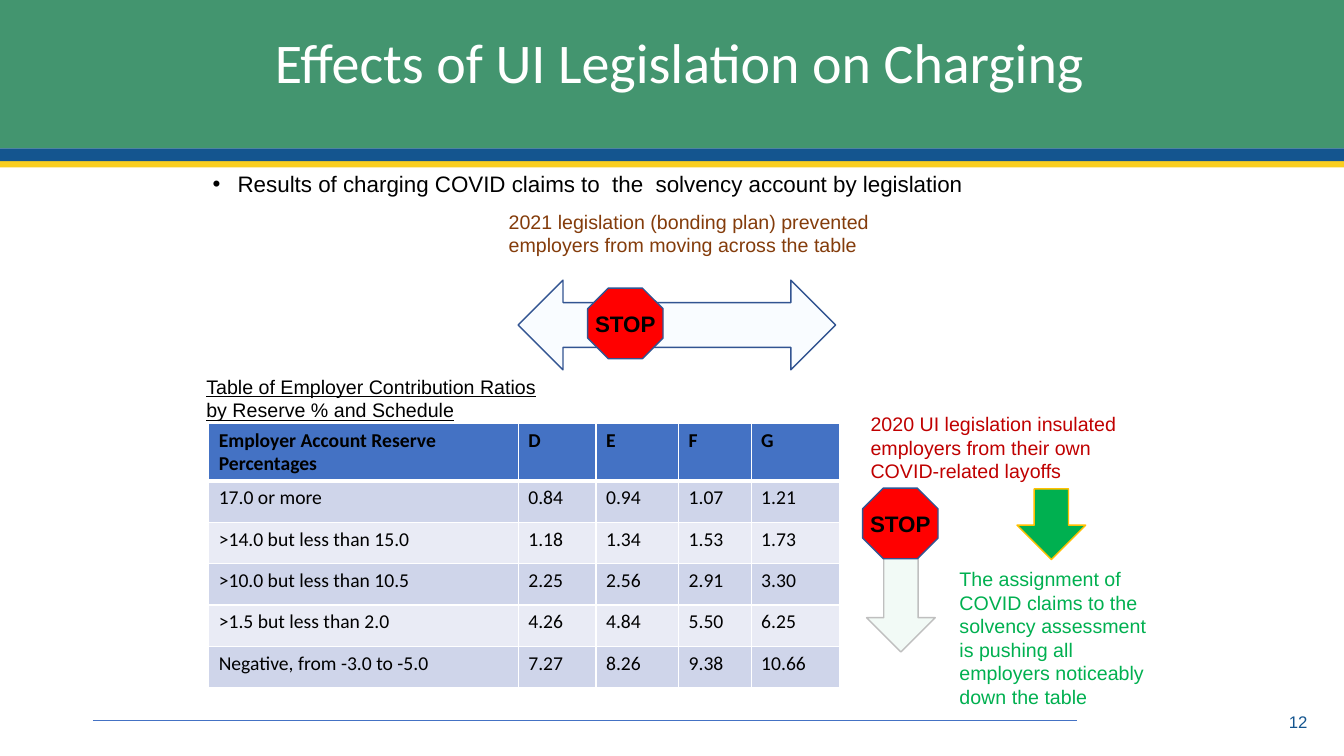
from dataclasses import dataclass
from typing import Optional

import lxml.etree
import pptx
import pptx.dml.color
import pptx.enum.shapes
import pptx.enum.text
import pptx.oxml
import pptx.oxml.ns
import pptx.util

Cm = pptx.util.Cm
Pt = pptx.util.Pt
Shapes = pptx.enum.shapes.MSO_SHAPE
Align = pptx.enum.text.PP_ALIGN
Anchor = pptx.enum.text.MSO_ANCHOR
qn = pptx.oxml.ns.qn

SLIDE_WIDTH, SLIDE_HEIGHT = 33.87, 19.05
WHITE, BLACK, NAVY, OUTLINE = "FFFFFF", "000000", "14558F", "325491"
GREEN, HEADER_BLUE = "00B050", "4472C4"
BAND_COLORS = ("CFD5EA", "E9EBF5")


@dataclass
class Box:
    left: float
    top: float
    width: float
    height: float

    def lengths(self) -> tuple:
        return Cm(self.left), Cm(self.top), Cm(self.width), Cm(self.height)


@dataclass
class Block:
    kind: int
    box: Box
    fill: str
    line: Optional[str] = None
    opacity: int = 100


@dataclass
class Label:
    text: str
    box: Box
    size: float = 14
    color: str = BLACK
    font: str = "Arial"
    underline: bool = False
    anchor: int = Anchor.TOP
    align: int = Align.LEFT
    bullet: bool = False
    line_spacing: float = 1.0


BLOCKS = [
    # Header bands
    Block(Shapes.RECTANGLE, Box(0, 4.06, SLIDE_WIDTH, 0.16), "F9CE20"),
    Block(Shapes.RECTANGLE, Box(0, 0, SLIDE_WIDTH, 3.74), "43956F"),
    Block(Shapes.RECTANGLE, Box(0, 3.74, SLIDE_WIDTH, 0.32), NAVY),
    # Arrows
    Block(Shapes.LEFT_RIGHT_ARROW, Box(13.06, 7.06, 8, 2.26), "99CCFF", OUTLINE, 5),
    Block(Shapes.DOWN_ARROW, Box(25.63, 12.32, 1.73, 1.78), GREEN, "FFC000"),
    Block(Shapes.DOWN_ARROW, Box(21.84, 12.34, 1.73, 4.09), GREEN, "BFBFBF", 5),
]

STOP_SIGNS = [Box(14.81, 7.26, 1.9, 1.78), Box(21.74, 12.3, 1.9, 1.78)]

LABELS = [
    Label("Effects of UI Legislation on Charging", Box(6.68, 0.9, 24.41, 1.5), 40, WHITE,
          "Calibri", anchor=Anchor.MIDDLE, line_spacing=0.9),
    Label("12", Box(28.91, 17.68, 4.29, 1.02), 12, NAVY,
          anchor=Anchor.MIDDLE, align=Align.RIGHT),
    Label("Results of charging COVID claims to  the  solvency account by legislation",
          Box(5.11, 4.24, 22.71, 0.95), 16, bullet=True, line_spacing=0.9),
    Label("The assignment of COVID claims to the solvency assessment is pushing all "
          "employers noticeably down the table", Box(23.93, 14.17, 5.64, 3.84), color=GREEN),
    Label("2021 legislation (bonding plan) prevented employers from moving across the table",
          Box(12.57, 5.16, 10.39, 1.45), color="843C0B"),
    Label("2020 UI legislation insulated employers from their own COVID-related layoffs",
          Box(21.69, 10.26, 7.19, 2.06), color="C00000"),
    Label("Table of Employer Contribution Ratios by Reserve % and Schedule",
          Box(4.95, 9.32, 9.02, 1.45), underline=True),
]

TABLE_BOX = Box(5.26, 10.67, 15.9, 6.58)
COLUMN_WIDTHS = (7.8, 1.96, 2.08, 1.83, 2.23)
ROW_HEIGHT = 1.04
CONTRIBUTION_RATIOS = [
    ("Employer Account Reserve Percentages", "D", "E", "F", "G"),
    ("17.0 or more", "0.84", "0.94", "1.07", "1.21"),
    (">14.0 but less than 15.0", "1.18", "1.34", "1.53", "1.73"),
    (">10.0 but less than 10.5", "2.25", "2.56", "2.91", "3.30"),
    (">1.5 but less than 2.0", "4.26", "4.84", "5.50", "6.25"),
    ("Negative, from -3.0 to -5.0", "7.27", "8.26", "9.38", "10.66"),
]


def rgb(value: str) -> pptx.dml.color.RGBColor:
    return pptx.dml.color.RGBColor.from_string(value)


def format_font(font, name: str, size: float, color: str, bold: bool = False) -> None:
    font.name, font.size, font.bold = name, Pt(size), bold
    font.color.rgb = rgb(color)


def add_block(slide, block: Block):
    shape = slide.shapes.add_shape(block.kind, *block.box.lengths())
    shape.shadow.inherit = False
    shape.fill.solid()
    shape.fill.fore_color.rgb = rgb(block.fill)
    if block.opacity < 100:
        color = shape.fill._xPr.find(".//" + qn("a:srgbClr"))
        lxml.etree.SubElement(color, qn("a:alpha"), val=str(block.opacity * 1000))
    if block.line:
        shape.line.color.rgb = rgb(block.line)
        shape.line.width = Pt(1)
    else:
        shape.line.fill.background()
    return shape


def add_stop_sign(slide, box: Box) -> None:
    shape = add_block(slide, Block(Shapes.OCTAGON, box, "FF0000", OUTLINE))
    frame = shape.text_frame
    frame.text = "STOP"
    frame.word_wrap = False
    frame.vertical_anchor = Anchor.MIDDLE
    frame.margin_left = frame.margin_right = frame.margin_top = frame.margin_bottom = 0
    frame.paragraphs[0].alignment = Align.CENTER
    format_font(frame.paragraphs[0].runs[0].font, "Arial", 16, BLACK, True)


def add_label(slide, label: Label) -> None:
    frame = slide.shapes.add_textbox(*label.box.lengths()).text_frame
    frame.text = label.text
    frame.word_wrap = True
    frame.vertical_anchor = label.anchor
    paragraph = frame.paragraphs[0]
    paragraph.alignment = label.align
    paragraph.line_spacing = label.line_spacing
    if label.bullet:
        properties = paragraph._p.get_or_add_pPr()
        properties.set("marL", str(Cm(0.63)))
        properties.set("indent", str(Cm(-0.63)))
        lxml.etree.SubElement(properties, qn("a:buFont"), typeface="Arial")
        lxml.etree.SubElement(properties, qn("a:buChar"), char="•")
    font = paragraph.runs[0].font
    format_font(font, label.font, label.size, label.color)
    if label.underline:
        font.underline = True


def add_border(cell, side: str, width: float) -> None:
    properties = cell._tc.get_or_add_tcPr()
    line = lxml.etree.SubElement(properties, qn(f"a:ln{side}"), w=str(Pt(width)))
    fill = lxml.etree.SubElement(line, qn("a:solidFill"))
    lxml.etree.SubElement(fill, qn("a:srgbClr"), val=WHITE)


def add_ratio_table(slide) -> None:
    table = slide.shapes.add_table(
        len(CONTRIBUTION_RATIOS), len(COLUMN_WIDTHS), *TABLE_BOX.lengths()).table
    for column, width in zip(table.columns, COLUMN_WIDTHS):
        column.width = Cm(width)
    for row_index, values in enumerate(CONTRIBUTION_RATIOS):
        is_header = row_index == 0
        table.rows[row_index].height = Cm(1.38 if is_header else ROW_HEIGHT)
        for column_index, value in enumerate(values):
            cell = table.cell(row_index, column_index)
            cell.text = value
            format_font(cell.text_frame.paragraphs[0].runs[0].font,
                        "Calibri", 14, BLACK, is_header)
            # A thick rule separates the header from the first row
            for side, width in (("L", 1), ("R", 1), ("T", 3 if row_index == 1 else 1),
                                ("B", 3 if is_header else 1)):
                add_border(cell, side, width)
            cell.fill.solid()
            cell.fill.fore_color.rgb = rgb(
                HEADER_BLUE if is_header else BAND_COLORS[(row_index - 1) % 2])


def add_footer_rule(slide) -> None:
    rule = slide.shapes.add_connector(
        pptx.enum.shapes.MSO_CONNECTOR.STRAIGHT, Cm(2.34), Cm(18.16), Cm(27.15), Cm(18.16))
    rule.line.color.rgb = rgb(HEADER_BLUE)
    rule.line.width = Pt(1)
    lxml.etree.SubElement(rule._element.spPr, qn("a:effectLst"))


def main() -> None:
    presentation = pptx.Presentation()
    presentation.slide_width, presentation.slide_height = Cm(SLIDE_WIDTH), Cm(SLIDE_HEIGHT)
    slide = presentation.slides.add_slide(presentation.slide_layouts[6])
    for block in BLOCKS:
        add_block(slide, block)
    add_footer_rule(slide)
    add_ratio_table(slide)
    for box in STOP_SIGNS:
        add_stop_sign(slide, box)
    for label in LABELS:
        add_label(slide, label)
    presentation.save("out.pptx")


if __name__ == "__main__":
    main()
